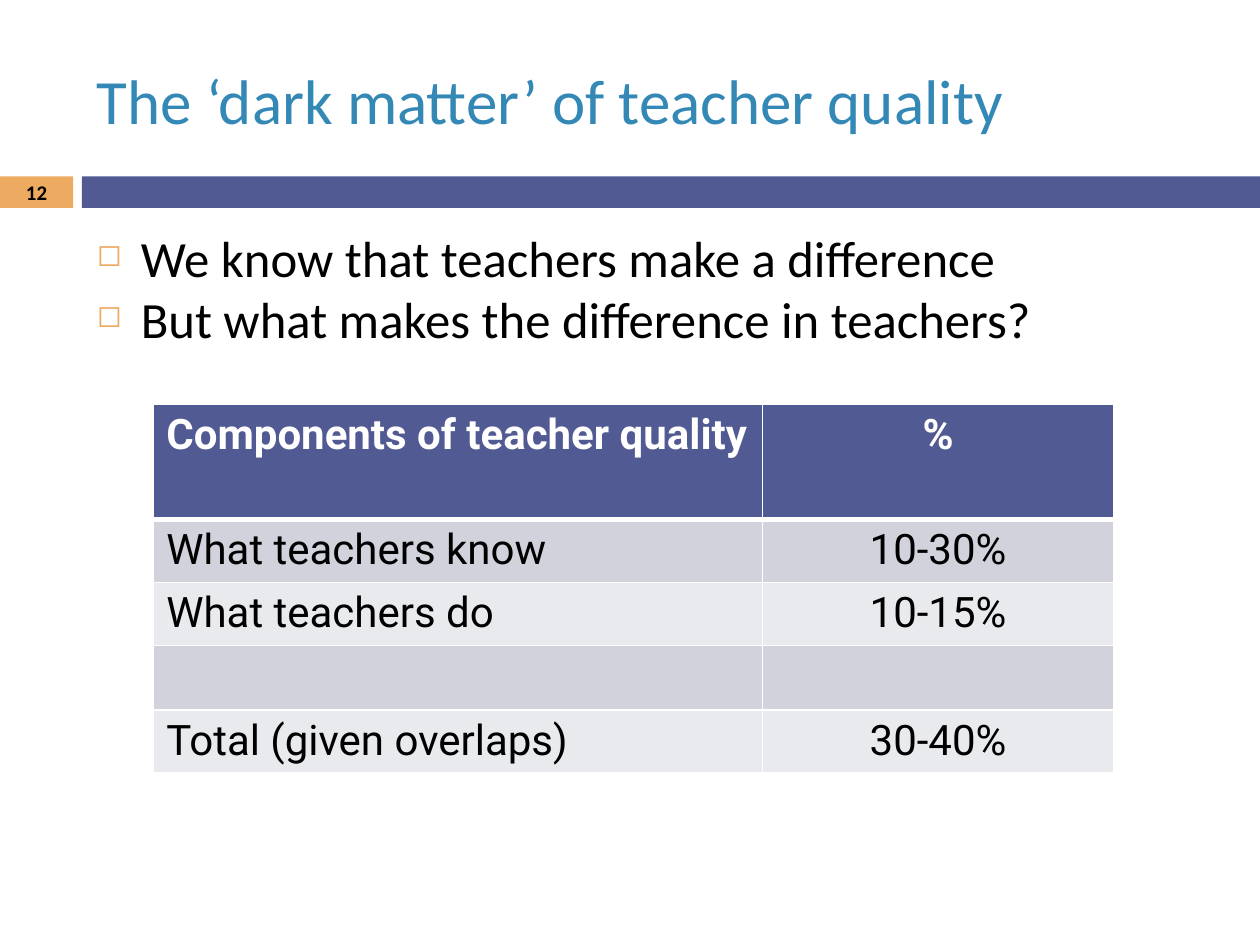
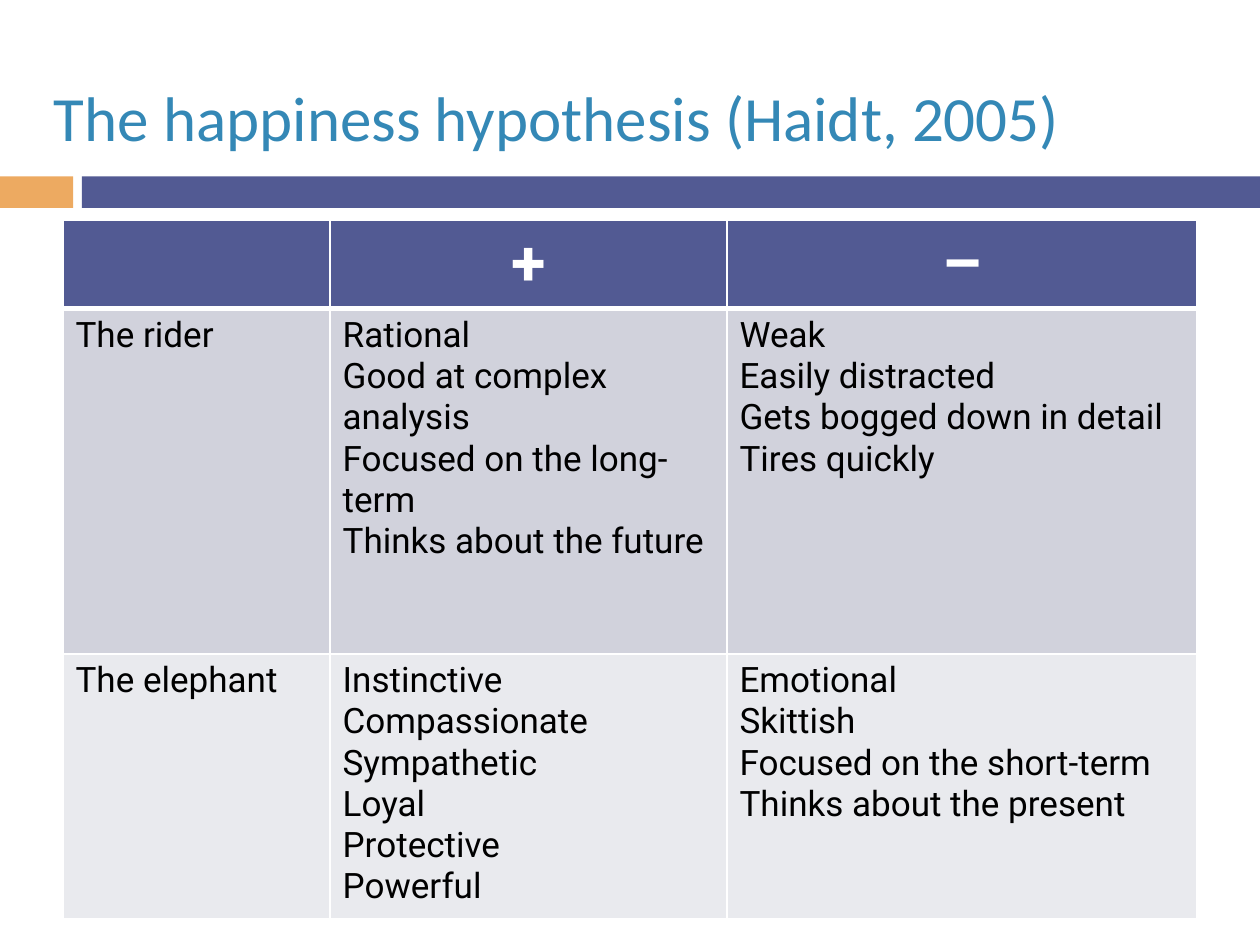
from dataclasses import dataclass

from lxml import etree
from pptx import Presentation
from pptx.dml.color import RGBColor
from pptx.enum import shapes, text
from pptx.oxml import ns
from pptx.util import Inches, Pt

ORANGE = RGBColor(0xED, 0xAA, 0x61)
INDIGO = RGBColor(0x52, 0x5A, 0x93)
TITLE_BLUE = RGBColor(0x34, 0x88, 0xB6)
DARK_ROW = RGBColor(0xD1, 0xD2, 0xDC)
LIGHT_ROW = RGBColor(0xE9, 0xEA, 0xEE)
BLACK = RGBColor(0, 0, 0)
WHITE = RGBColor(0xFF, 0xFF, 0xFF)
TEXT_FONT = "Calibri"
TABLE_FONT = "Roboto"


@dataclass
class Box:
    """A region of the slide, in inches."""
    left: float
    top: float
    width: float
    height: float

    def emu(self):
        return [Inches(n) for n in (self.left, self.top, self.width, self.height)]


PAGE = Box(0, 0, 10, 7.5)
TAB = Box(0, 1.4, 0.58, 0.25)
BAND = Box(0.65, TAB.top, PAGE.width - 0.65, TAB.height)


def set_font(paragraph, name, size, color, bold=False):
    for run in paragraph.runs:
        run.font.name = name
        run.font.size = Pt(size)
        run.font.color.rgb = color
        run.font.bold = bold


def add_text(slide, box, lines, size, color, bold=False, anchor=text.MSO_ANCHOR.TOP):
    frame = slide.shapes.add_textbox(*box.emu()).text_frame
    frame.word_wrap = True
    frame.vertical_anchor = anchor
    frame.text = "\n".join(lines)
    for paragraph in frame.paragraphs:
        set_font(paragraph, TEXT_FONT, size, color, bold)
    return frame


def add_bar(slide, box, color):
    bar = slide.shapes.add_shape(shapes.MSO_SHAPE.RECTANGLE, *box.emu())
    bar.shadow.inherit = False
    bar.fill.solid()
    bar.fill.fore_color.rgb = color
    bar.line.fill.background()


def add_titled_slide(presentation, title, title_box):
    slide = presentation.slides.add_slide(presentation.slide_layouts[6])
    add_bar(slide, TAB, ORANGE)
    add_bar(slide, BAND, INDIGO)
    add_text(slide, title_box, [title], 36, TITLE_BLUE, anchor=text.MSO_ANCHOR.MIDDLE)
    return slide


def add_slide_number(slide, number):
    frame = add_text(slide, TAB, [number], 11.9, BLACK, True, text.MSO_ANCHOR.MIDDLE)
    frame.margin_top = frame.margin_bottom = 0
    frame.paragraphs[0].alignment = text.PP_ALIGN.CENTER


def add_bullets(slide, box, lines):
    frame = add_text(slide, box, lines, 29, BLACK)
    for paragraph in frame.paragraphs:
        properties = paragraph._p.get_or_add_pPr()
        properties.set("marL", str(Inches(0.35)))
        properties.set("indent", str(-Inches(0.35)))
        color = etree.SubElement(properties, ns.qn("a:buClr"))
        etree.SubElement(color, ns.qn("a:srgbClr"), val=str(ORANGE))
        etree.SubElement(properties, ns.qn("a:buSzPct"), val="60000")
        etree.SubElement(properties, ns.qn("a:buChar"), char="◻")


def set_borders(cell, row):
    """White rules, heavier between the header and the body."""
    widths = {"lnL": 1, "lnR": 1, "lnT": 3 if row == 1 else 1, "lnB": 3 if row == 0 else 1}
    for side, width in widths.items():
        line = etree.SubElement(cell._tc.get_or_add_tcPr(), ns.qn(f"a:{side}"), w=str(Pt(width)))
        fill = etree.SubElement(line, ns.qn("a:solidFill"))
        etree.SubElement(fill, ns.qn("a:srgbClr"), val=str(WHITE))


def fit(lines, total, weights):
    """Share a total length among rows or columns by weight."""
    for line, weight in zip(lines, weights):
        yield line, Inches(total * weight / sum(weights))


def add_banded_table(slide, box, columns, rows, content, header_size, body_size, centred):
    table = slide.shapes.add_table(len(rows), len(columns), *box.emu()).table
    for column, width in fit(table.columns, box.width, columns):
        column.width = width
    for row, height in fit(table.rows, box.height, rows):
        row.height = height
    for r, values in enumerate(content):
        header = r == 0
        for c, value in enumerate(values):
            cell = table.cell(r, c)
            set_borders(cell, r)
            cell.fill.solid()
            cell.fill.fore_color.rgb = INDIGO if header else DARK_ROW if r % 2 else LIGHT_ROW
            cell.text = value
            for paragraph in cell.text_frame.paragraphs:
                set_font(paragraph, TABLE_FONT, header_size if header else body_size,
                         WHITE if header else BLACK, header)
                if (r, c) in centred:
                    paragraph.alignment = text.PP_ALIGN.CENTER


def build_quality_slide(presentation):
    slide = add_titled_slide(presentation, "The ‘dark matter’ of teacher quality",
                             Box(0.67, 0.25, 8.92, 1.08))
    add_slide_number(slide, "12")
    add_bullets(slide, Box(0.67, 1.75, 9.33, 4.92), [
        "We know that teachers make a difference",
        "But what makes the difference in teachers?",
    ])
    content = [
        ("Components of teacher quality", "%"),
        ("What teachers know", "10-30%"),
        ("What teachers do", "10-15%"),
        ("", ""),
        ("Total (given overlaps)", "30-40%"),
    ]
    add_banded_table(slide, Box(1.22, 3.21, 7.62, 2.9), (4.83, 2.79),
                     (0.91, 0.49, 0.49, 0.51, 0.49), content, 24, 24,
                     centred=[(row, 1) for row in range(len(content))])


def build_happiness_slide(presentation):
    slide = add_titled_slide(presentation, "The happiness hypothesis (Haidt, 2005)",
                             Box(0.33, 0.3, 9.32, 1.25))
    content = [
        ("", "+", "–"),
        ("The rider",
         "Rational\nGood at complex analysis\nFocused on the long-term\nThinks about the future",
         "Weak\nEasily distracted\nGets bogged down in detail\nTires quickly"),
        ("The elephant",
         "Instinctive\nCompassionate\nSympathetic\nLoyal\nProtective\nPowerful",
         "Emotional\nSkittish\nFocused on the short-term\nThinks about the present"),
    ]
    add_banded_table(slide, Box(0.5, 1.75, 9, 5.48), (2.12, 3.15, 3.73),
                     (0.68, 2.74, 2.06), content, 36, 20, centred=[(0, 1), (0, 2)])


def main():
    presentation = Presentation()
    presentation.slide_width = Inches(PAGE.width)
    presentation.slide_height = Inches(PAGE.height)
    build_quality_slide(presentation)
    build_happiness_slide(presentation)
    presentation.save("out.pptx")


if __name__ == "__main__":
    main()
